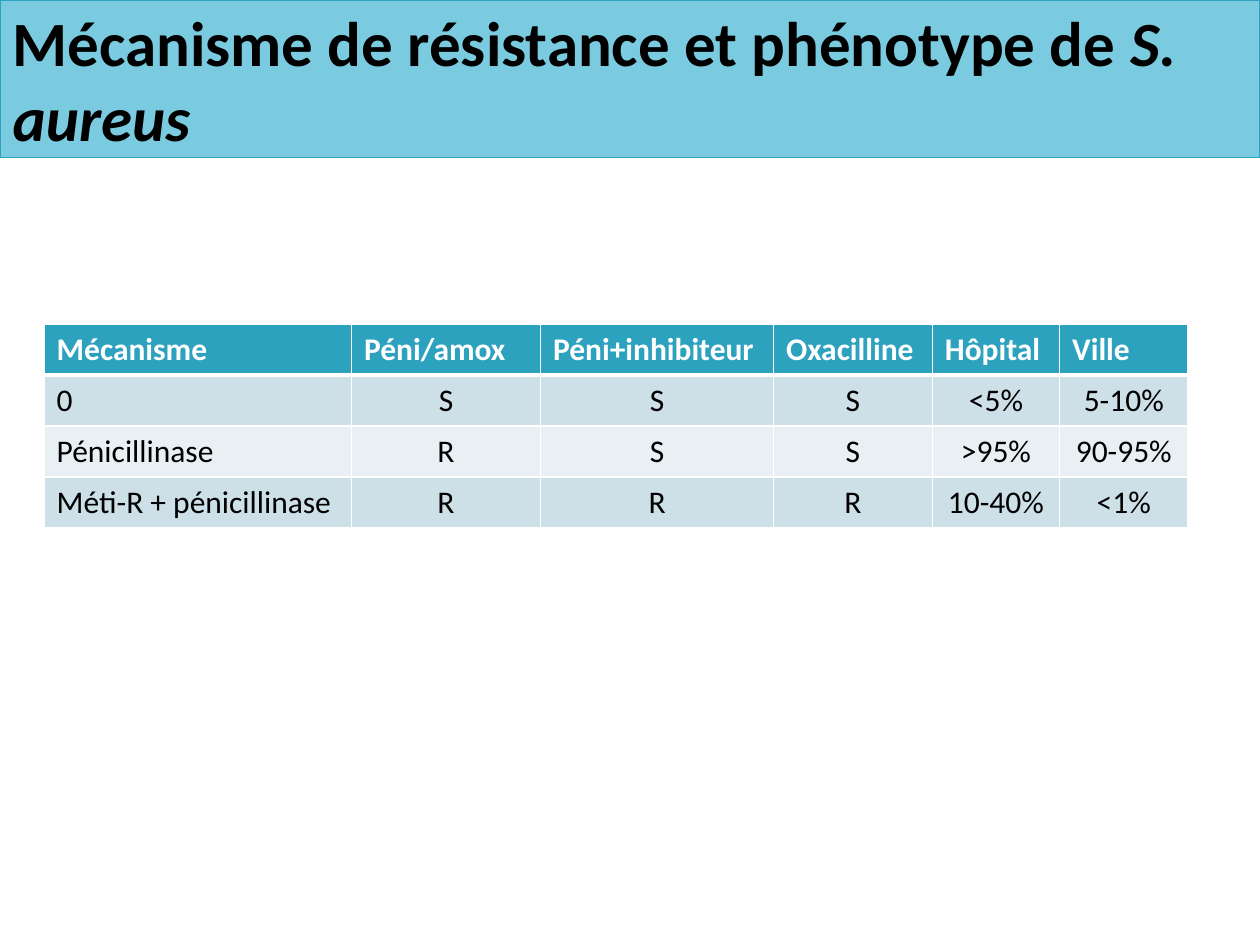
from lxml.etree import SubElement
from pptx import Presentation
from pptx.dml.color import RGBColor
from pptx.enum.text import MSO_ANCHOR as Anchor, MSO_AUTO_SIZE as AutoSize, PP_ALIGN as Align
from pptx.oxml.ns import qn
from pptx.util import Inches, Pt

FONT = "Calibri"
BLACK = RGBColor(0x00, 0x00, 0x00)
WHITE = RGBColor(0xFF, 0xFF, 0xFF)
TEAL = RGBColor(0x2D, 0xA2, 0xBF)
LIGHT_TEAL = RGBColor(0x7A, 0xCB, 0xE0)
BANDS = (RGBColor(0xCD, 0xE0, 0xE8), RGBColor(0xE8, 0xF0, 0xF4))

COLUMN_WIDTHS = (2.44, 1.5, 1.85, 1.26, 1.01, 1.02)
ROW_HEIGHT = 0.405
ROWS = (
    ("Mécanisme", "Péni/amox", "Péni+inhibiteur", "Oxacilline", "Hôpital", "Ville"),
    ("0", "S", "S", "S", "<5%", "5-10%"),
    ("Pénicillinase", "R", "S", "S", ">95%", "90-95%"),
    ("Méti-R + pénicillinase", "R", "R", "R", "10-40%", "<1%"),
)


def style_paragraph(paragraph, size, color, bold, alignment=Align.LEFT):
    paragraph.alignment = alignment
    font = paragraph.font
    font.name, font.size, font.bold = FONT, Pt(size), bold
    font.color.rgb = color


def add_title(slide, text, species):
    title = slide.shapes.title
    title.left, title.top = Inches(0), Inches(0)
    title.width, title.height = Inches(10), Inches(1.25)
    title.fill.solid()
    title.fill.fore_color.rgb = LIGHT_TEAL
    title.line.color.rgb = TEAL
    title.line.width = Pt(0.75)

    frame = title.text_frame
    frame.word_wrap = True
    frame.auto_size = AutoSize.NONE
    frame.vertical_anchor = Anchor.MIDDLE
    paragraph = frame.paragraphs[0]
    style_paragraph(paragraph, 36, BLACK, True)
    paragraph.add_run().text = text
    species_run = paragraph.add_run()
    species_run.text = species
    species_run.font.italic = True


def set_border(cell, side, width):
    properties = cell._tc.get_or_add_tcPr()
    line = SubElement(properties, qn(f"a:ln{side}"), w=str(Pt(width)))
    fill = SubElement(line, qn("a:solidFill"))
    SubElement(fill, qn("a:srgbClr"), val=str(WHITE))


def fill_cell(cell, text, row, column):
    is_header = row == 0
    # The rule under the header is thicker than the others
    widths = {"L": 1, "R": 1, "T": 3 if row == 1 else 1, "B": 3 if is_header else 1}
    for side, width in widths.items():
        set_border(cell, side, width)
    cell.fill.solid()
    cell.fill.fore_color.rgb = TEAL if is_header else BANDS[(row - 1) % 2]
    cell.text = text
    alignment = Align.LEFT if is_header or column == 0 else Align.CENTER
    color = WHITE if is_header else BLACK
    style_paragraph(cell.text_frame.paragraphs[0], 18, color, is_header, alignment)


def add_resistance_table(slide):
    table = slide.shapes.add_table(
        len(ROWS), len(COLUMN_WIDTHS), Inches(0.35), Inches(2.57),
        Inches(sum(COLUMN_WIDTHS)), Inches(ROW_HEIGHT * len(ROWS)),
    ).table
    for column, width in zip(table.columns, COLUMN_WIDTHS):
        column.width = Inches(width)
    for row, texts in enumerate(ROWS):
        for column, text in enumerate(texts):
            fill_cell(table.cell(row, column), text, row, column)


def main():
    presentation = Presentation()
    presentation.slide_width, presentation.slide_height = Inches(10), Inches(7.5)
    slide = presentation.slides.add_slide(presentation.slide_layouts[5])

    # Title band
    add_title(slide, "Mécanisme de résistance et phénotype de ", "S. aureus")
    # Mechanisms, phenotypes and frequencies
    add_resistance_table(slide)

    presentation.save("out.pptx")


if __name__ == "__main__":
    main()
